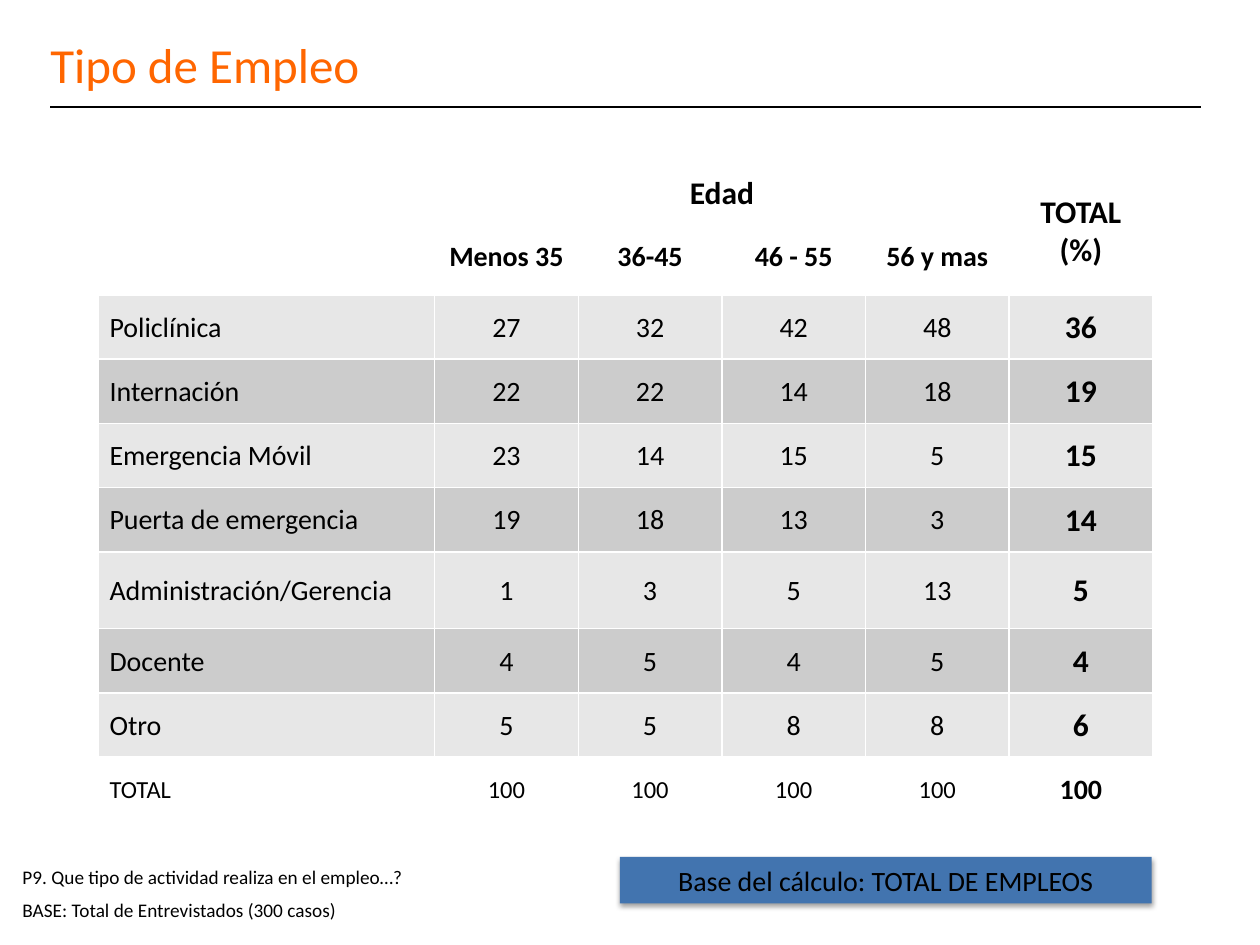
from lxml.etree import SubElement
from pptx import Presentation
from pptx.dml.color import RGBColor
from pptx.enum.shapes import MSO_CONNECTOR as Connector, MSO_SHAPE as Shape
from pptx.enum.text import MSO_ANCHOR as Anchor, MSO_AUTO_SIZE as AutoSize, PP_ALIGN as Align
from pptx.oxml.ns import qn
from pptx.util import Inches, Pt

FONT = "Calibri"
BLACK, WHITE, ORANGE, BLUE = "000000", "FFFFFF", "FF6600", "4274AF"
BANDS = ("E7E7E7", "CCCCCC")
AGES = ("Menos 35", "36-45", "46 - 55", "56 y mas")
JOBS = (
    ("Policlínica", 27, 32, 42, 48, 36),
    ("Internación", 22, 22, 14, 18, 19),
    ("Emergencia Móvil", 23, 14, 15, 5, 15),
    ("Puerta de emergencia", 19, 18, 13, 3, 14),
    ("Administración/Gerencia", 1, 3, 5, 13, 5),
    ("Docente", 4, 5, 4, 5, 4),
    ("Otro", 5, 5, 8, 8, 6),
)
TOTALS = ("TOTAL", 100, 100, 100, 100, 100)
COLUMN_WIDTHS = [2.67] + [1.14] * 5
ROW_HEIGHTS = [0.39] + [0.51] * 5 + [0.61] + [0.51] * 3


def color(code):
    """Turn a hex string into a colour."""
    return RGBColor.from_string(code)


def box(left, top, width, height):
    """Turn four lengths in inches into slide units."""
    return [Inches(length) for length in (left, top, width, height)]


def write(frame, text, size, bold=False, align=Align.LEFT, ink=BLACK):
    """Fill a text frame with one paragraph per line of text."""
    frame.text = text
    for paragraph in frame.paragraphs:
        paragraph.alignment = align
        font = paragraph.font
        font.name, font.size, font.bold = FONT, Pt(size), bold
        font.color.rgb = color(ink)


def add_heading(slide):
    """Place the title and the rule below it."""
    title = slide.shapes.title
    title.left, title.top, title.width, title.height = box(0.3, 0.16, 6.34, 0.69)
    title.text_frame.vertical_anchor = Anchor.MIDDLE
    write(title.text_frame, "Tipo de Empleo", 28, ink=ORANGE)
    rule = slide.shapes.add_connector(Connector.STRAIGHT, *box(0.4, 0.85, 9.53, 0.85))
    rule.line.color.rgb = color(BLACK)
    rule.line.width = Pt(0.75)
    SubElement(rule._element.spPr, qn("a:effectLst"))


def add_note(slide, text, top, width):
    """Add a footnote at the left edge."""
    note = slide.shapes.add_textbox(*box(0.08, top, width, 0.3))
    note.text_frame.word_wrap = True
    note.text_frame.auto_size = AutoSize.SHAPE_TO_FIT_TEXT
    write(note.text_frame, text, 11)


def add_base_label(slide, text):
    """Add the shaded label that names the base of the calculation."""
    label = slide.shapes.add_shape(Shape.RECTANGLE, *box(4.92, 6.8, 4.22, 0.37))
    label.fill.solid()
    label.fill.fore_color.rgb = color(BLUE)
    label.line.fill.background()
    label.shadow.inherit = False
    effects = label._element.spPr.find(qn("a:effectLst"))
    shadow = SubElement(effects, qn("a:outerShdw"), blurRad=str(Pt(3.1)),
                        dist=str(Pt(1.6)), dir="5400000", rotWithShape="0")
    shade = SubElement(shadow, qn("a:srgbClr"), val=BLACK)
    SubElement(shade, qn("a:alpha"), val="38000")
    label.text_frame.word_wrap = True
    label.text_frame.auto_size = AutoSize.SHAPE_TO_FIT_TEXT
    write(label.text_frame, text, 16, align=Align.CENTER)


def style_cell(cell, band=None):
    """Give a cell white borders and its band, if any."""
    properties = cell._tc.get_or_add_tcPr()
    for side in ("lnL", "lnR", "lnT", "lnB"):
        border = SubElement(properties, qn(f"a:{side}"), w=str(Pt(1)))
        SubElement(SubElement(border, qn("a:solidFill")), qn("a:srgbClr"), val=WHITE)
    if band:
        cell.fill.solid()
        cell.fill.fore_color.rgb = color(band)
    else:
        cell.fill.background()


def write_cell(cell, text, size, bold=False, align=Align.CENTER):
    """Write centred text with narrow margins into a cell."""
    cell.vertical_anchor = Anchor.MIDDLE
    cell.margin_left = cell.margin_right = cell.margin_top = Inches(0.01)
    cell.margin_bottom = 0
    write(cell.text_frame, text, size, bold, align)


def write_row(table, row, values, size):
    """Write an indented label, its figures and a larger bold total."""
    last = len(values) - 1
    for column, value in enumerate(values):
        cell = table.cell(row, column)
        if column == 0:
            write_cell(cell, value, size, align=Align.LEFT)
            indent = cell.text_frame.paragraphs[0]._p.get_or_add_pPr()
            indent.set("marL", str(Inches(0.08)))
        else:
            total = column == last
            write_cell(cell, str(value), size + 2 * total, total)


def add_jobs_table(slide):
    """Build the table of job types by age group."""
    frame = slide.shapes.add_table(
        len(ROW_HEIGHTS), len(COLUMN_WIDTHS),
        *box(0.78, 1.33, sum(COLUMN_WIDTHS), sum(ROW_HEIGHTS)))
    table = frame.table
    table.first_row = table.horz_banding = False
    for column, width in zip(table.columns, COLUMN_WIDTHS):
        column.width = Inches(width)
    for index, (row, height) in enumerate(zip(table.rows, ROW_HEIGHTS)):
        row.height = Inches(height)
        band = BANDS[index % 2] if 2 <= index < 2 + len(JOBS) else None
        for cell in row.cells:
            style_cell(cell, band)

    table.cell(0, 1).merge(table.cell(0, 4))
    table.cell(0, 5).merge(table.cell(1, 5))
    write_cell(table.cell(0, 1), "Edad", 18, True)
    write_cell(table.cell(0, 5), "TOTAL\n(%)", 18, True)
    for column, age in enumerate(AGES, 1):
        write_cell(table.cell(1, column), age, 16, True)
    for row, job in enumerate(JOBS, 2):
        write_row(table, row, job, 16)
    write_row(table, 2 + len(JOBS), TOTALS, 14)


def main():
    """Build and save the slide."""
    deck = Presentation()
    deck.slide_width, deck.slide_height = Inches(10), Inches(7.5)
    slide = deck.slides.add_slide(deck.slide_layouts[5])
    add_note(slide, "P9. Que tipo de actividad realiza en el empleo…?", 6.82, 3.59)
    add_note(slide, "BASE: Total de Entrevistados (300 casos)", 7.08, 9.14)
    add_heading(slide)
    add_jobs_table(slide)
    add_base_label(slide, "Base del cálculo: TOTAL DE EMPLEOS")
    deck.save("out.pptx")


if __name__ == "__main__":
    main()
